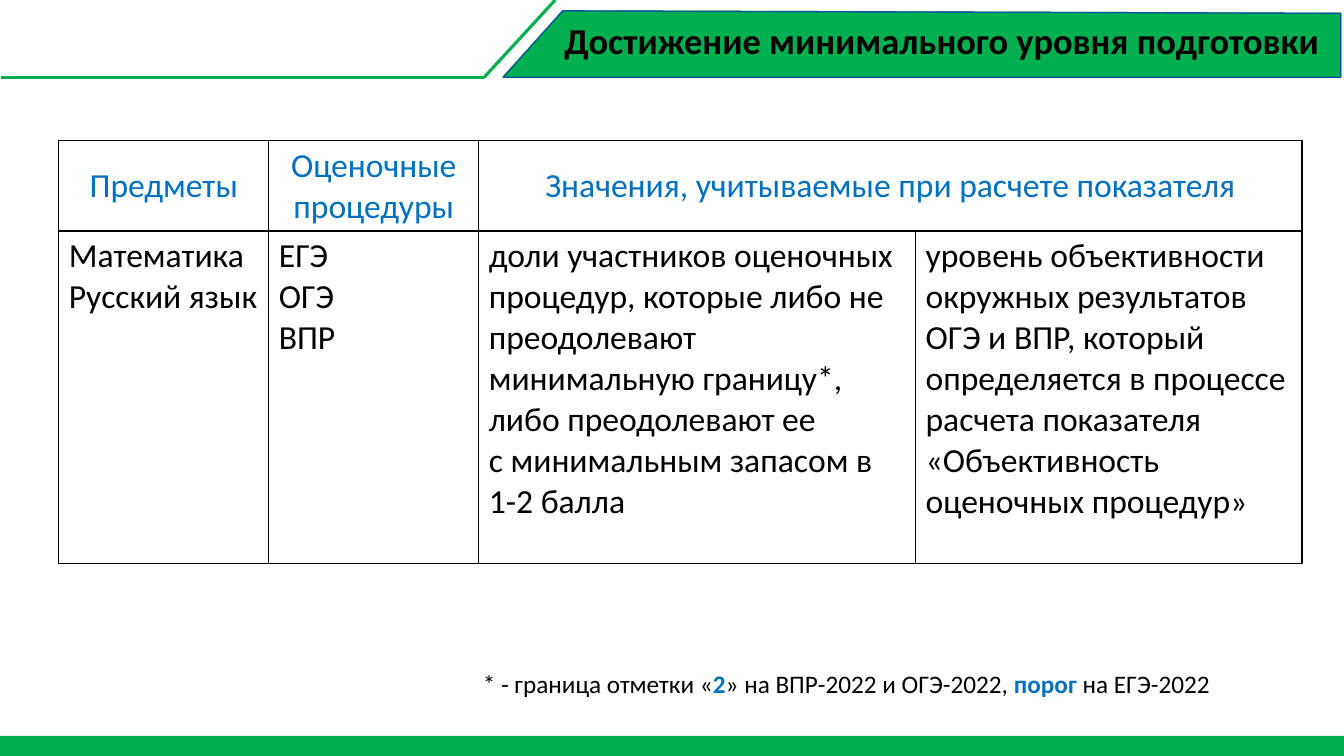
from dataclasses import dataclass

from lxml.etree import SubElement
from pptx import Presentation
from pptx.dml.color import RGBColor
from pptx.enum.shapes import MSO_CONNECTOR, MSO_SHAPE
from pptx.enum.text import MSO_ANCHOR, PP_ALIGN
from pptx.oxml import parse_xml
from pptx.oxml.ns import nsdecls, qn
from pptx.util import Inches, Pt


@dataclass(frozen=True)
class Theme:
    font: str = "Calibri"
    green: str = "00B050"
    navy: str = "0C549E"
    blue: str = "0070C0"
    black: str = "000000"
    title_size: float = 26
    table_size: float = 24
    note_size: float = 18
    thin: float = 1
    thick: float = 2.25


class SlideBuilder:
    COLUMNS = 160
    ROWS = 90

    def __init__(self, deck, theme):
        self.theme = theme
        self.slide = deck.slides.add_slide(deck.slide_layouts[6])
        self.shapes = self.slide.shapes
        self.column = deck.slide_width / self.COLUMNS
        self.row = deck.slide_height / self.ROWS

    def place(self, x, y):
        return round(x * self.column), round(y * self.row)

    def paint(self, shape, fill, line):
        shape.shadow.inherit = False
        if fill:
            shape.fill.solid()
            shape.fill.fore_color.rgb = RGBColor.from_string(fill)
        else:
            shape.fill.background()
        if line:
            shape.line.color.rgb = RGBColor.from_string(line)
            shape.line.width = Pt(self.theme.thin)
        else:
            shape.line.fill.background()

    def bar(self, x, y, width, height, fill):
        bar = self.shapes.add_shape(
            MSO_SHAPE.RECTANGLE, *self.place(x, y), *self.place(width, height))
        self.paint(bar, fill, None)

    def polygon(self, corners, fill, line):
        start, *others = [self.place(x, y) for x, y in corners]
        outline = self.shapes.build_freeform(*start)
        outline.add_line_segments(others, close=True)
        self.paint(outline.convert_to_shape(), fill, line)

    def rule(self, start, end, color):
        rule = self.shapes.add_connector(
            MSO_CONNECTOR.STRAIGHT, *self.place(*start), *self.place(*end))
        rule.line.color.rgb = RGBColor.from_string(color)
        rule.line.width = Pt(self.theme.thick)
        SubElement(rule._element.spPr, qn("a:effectLst"))

    def style(self, run, size, color, bold=False):
        run.font.name = self.theme.font
        run.font.size = Pt(size)
        run.font.bold = bold
        run.font.color.rgb = RGBColor.from_string(color)

    def text(self, x, y, width, height, size, parts):
        box = self.shapes.add_textbox(*self.place(x, y), *self.place(width, height))
        box.text_frame.word_wrap = True
        paragraph = box.text_frame.paragraphs[0]
        for wording, color, bold in parts:
            run = paragraph.add_run()
            run.text = wording
            self.style(run, size, color, bold)

    def border(self, cell):
        properties = cell._tc.get_or_add_tcPr()
        for index, side in enumerate(("lnL", "lnR", "lnT", "lnB")):
            properties.insert(index, parse_xml(
                f'<a:{side} {nsdecls("a")} w="{Pt(self.theme.thin)}"><a:solidFill>'
                f'<a:srgbClr val="{self.theme.black}"/></a:solidFill></a:{side}>'))

    def table(self, x, y, widths, heights, header, body):
        table = self.shapes.add_table(
            len(heights), len(widths), *self.place(x, y),
            *self.place(sum(widths), sum(heights))).table
        table.first_row = table.horz_banding = False
        for column, width in zip(table.columns, widths):
            column.width = self.place(width, 0)[0]
        for row, height in zip(table.rows, heights):
            row.height = self.place(0, height)[1]
        for cell in table.iter_cells():
            cell.fill.background()
            self.border(cell)
        table.cell(0, len(header) - 1).merge(table.cell(0, len(widths) - 1))
        looks = ((header, self.theme.blue, PP_ALIGN.CENTER, MSO_ANCHOR.MIDDLE),
                 (body, self.theme.black, PP_ALIGN.LEFT, MSO_ANCHOR.TOP))
        for row, (wordings, color, alignment, anchor) in enumerate(looks):
            for column, wording in enumerate(wordings):
                cell = table.cell(row, column)
                cell.vertical_anchor = anchor
                cell.text_frame.text = wording
                for paragraph in cell.text_frame.paragraphs:
                    paragraph.alignment = alignment
                    for run in paragraph.runs:
                        self.style(run, self.theme.table_size, color)


def main():
    deck = Presentation()
    deck.slide_width, deck.slide_height = Inches(13.33), Inches(7.5)
    theme = Theme()
    page = SlideBuilder(deck, theme)

    banner = [(67, 1.3), (159.6, 1.6), (159.6, 9.2), (59.9, 9.2)]
    page.polygon(banner, theme.green, theme.green)
    page.polygon(banner, None, theme.navy)
    page.bar(0, 87.6, page.COLUMNS, 2.4, theme.green)
    bend = (57.6, 9.25)
    page.rule((66.1, 0), bend, theme.green)
    page.rule(bend, (0.1, 9.25), theme.green)

    page.text(56.3, 79, 93.4, 4.8, theme.note_size, [
        ("* - граница отметки «", theme.black, False),
        ("2", theme.blue, True),
        ("» на ВПР-2022 и ОГЭ-2022, ", theme.black, False),
        ("порог ", theme.blue, True),
        ("на ЕГЭ-2022", theme.black, False),
    ])
    page.text(66, 1.6, 93, 6.5, theme.title_size, [
        ("Достижение минимального уровня подготовки", theme.black, True)])

    page.table(
        7, 16.7, [25, 25, 52, 46], [10.8, 39.6],
        ["Предметы", "Оценочные процедуры",
         "Значения, учитываемые при расчете показателя"],
        ["Математика\nРусский язык",
         "ЕГЭ\nОГЭ\nВПР",
         "доли участников оценочных процедур, которые либо не преодолевают "
         "минимальную границу*, либо преодолевают ее\n"
         "с минимальным запасом в 1-2 балла",
         "уровень объективности окружных результатов ОГЭ и ВПР, который "
         "определяется в процессе расчета показателя «Объективность "
         "оценочных процедур»"])
    deck.save("out.pptx")


if __name__ == "__main__":
    main()
